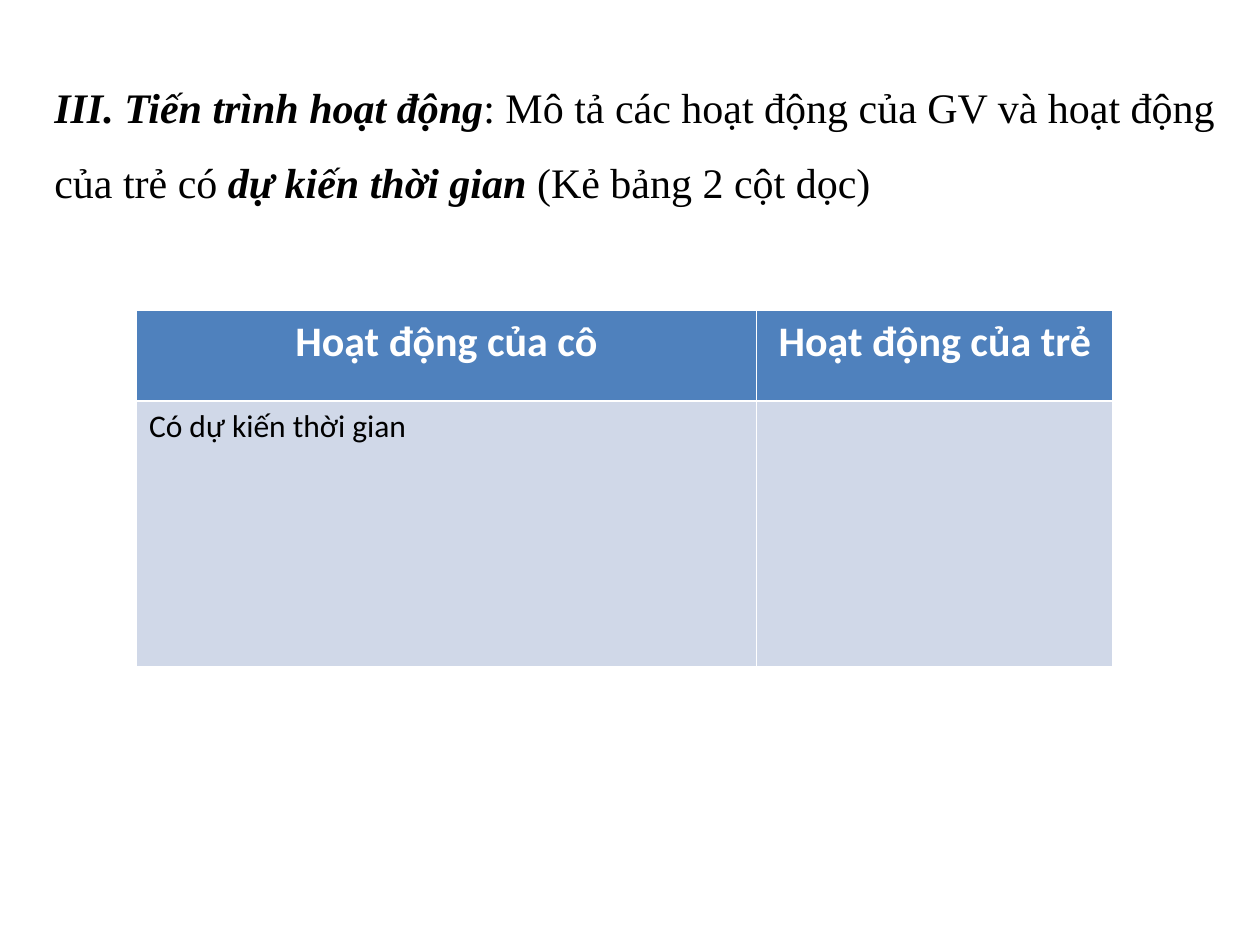
from dataclasses import dataclass

from pptx import Presentation
from pptx.dml.color import RGBColor
from pptx.enum.text import MSO_ANCHOR, MSO_AUTO_SIZE, PP_ALIGN
from pptx.util import Cm, Pt


@dataclass(frozen=True)
class Theme:
    heading_font: str = "Times New Roman"
    table_font: str = "Calibri"
    large: Pt = Pt(24)
    body: Pt = Pt(18)
    black: RGBColor = RGBColor(0, 0, 0)
    white: RGBColor = RGBColor(255, 255, 255)
    header_fill: RGBColor = RGBColor(0x4F, 0x81, 0xBD)
    body_fill: RGBColor = RGBColor(0xD0, 0xD8, 0xE8)


theme = Theme()

deck = Presentation()
deck.slide_width, deck.slide_height = Cm(25.4), Cm(19.05)
page = deck.slides.add_slide(deck.slide_layouts.get_by_name("Title Only"))

# Heading, with the key phrases in bold italic
title = page.shapes.title
title.left, title.top, title.width, title.height = Cm(0.84), Cm(1), Cm(24.13), Cm(4.7)
frame = title.text_frame
frame.word_wrap = True
frame.auto_size = MSO_AUTO_SIZE.NONE
frame.vertical_anchor = MSO_ANCHOR.TOP
para = frame.paragraphs[0]
para.alignment = PP_ALIGN.LEFT
para.line_spacing = 1.5
para.font.name = theme.heading_font
para.font.size = theme.large
para.font.color.rgb = theme.black
heading = [
    ("III. Tiến trình hoạt động", True),
    (": Mô tả các hoạt động của GV và hoạt động của trẻ có ", False),
    ("dự kiến thời gian ", True),
    ("(Kẻ bảng 2 cột dọc)", False),
]
for text, emphasis in heading:
    span = para.add_run()
    span.text = text
    span.font.bold = span.font.italic = emphasis

# Activity table: the default table style supplies the white rules
rows = [
    ["Hoạt động của cô", "Hoạt động của trẻ"],
    ["Có dự kiến thời gian", ""],
]
column_widths = [Cm(12.5), Cm(7.19)]
row_heights = [Cm(1.83), Cm(5.36)]
table = page.shapes.add_table(
    len(rows), len(column_widths), Cm(2.75), Cm(6.25), sum(column_widths), sum(row_heights)
).table
for column, width in zip(table.columns, column_widths):
    column.width = width
for row, height in zip(table.rows, row_heights):
    row.height = height

for row_index, texts in enumerate(rows):
    is_header = row_index == 0
    for column_index, text in enumerate(texts):
        cell = table.cell(row_index, column_index)
        cell.text = text
        cell.fill.solid()
        cell.fill.fore_color.rgb = theme.header_fill if is_header else theme.body_fill
        para = cell.text_frame.paragraphs[0]
        para.alignment = PP_ALIGN.CENTER if is_header else PP_ALIGN.LEFT
        para.font.name = theme.table_font
        para.font.size = theme.large if is_header else theme.body
        para.font.bold = is_header
        para.font.color.rgb = theme.white if is_header else theme.black

deck.save("out.pptx")
